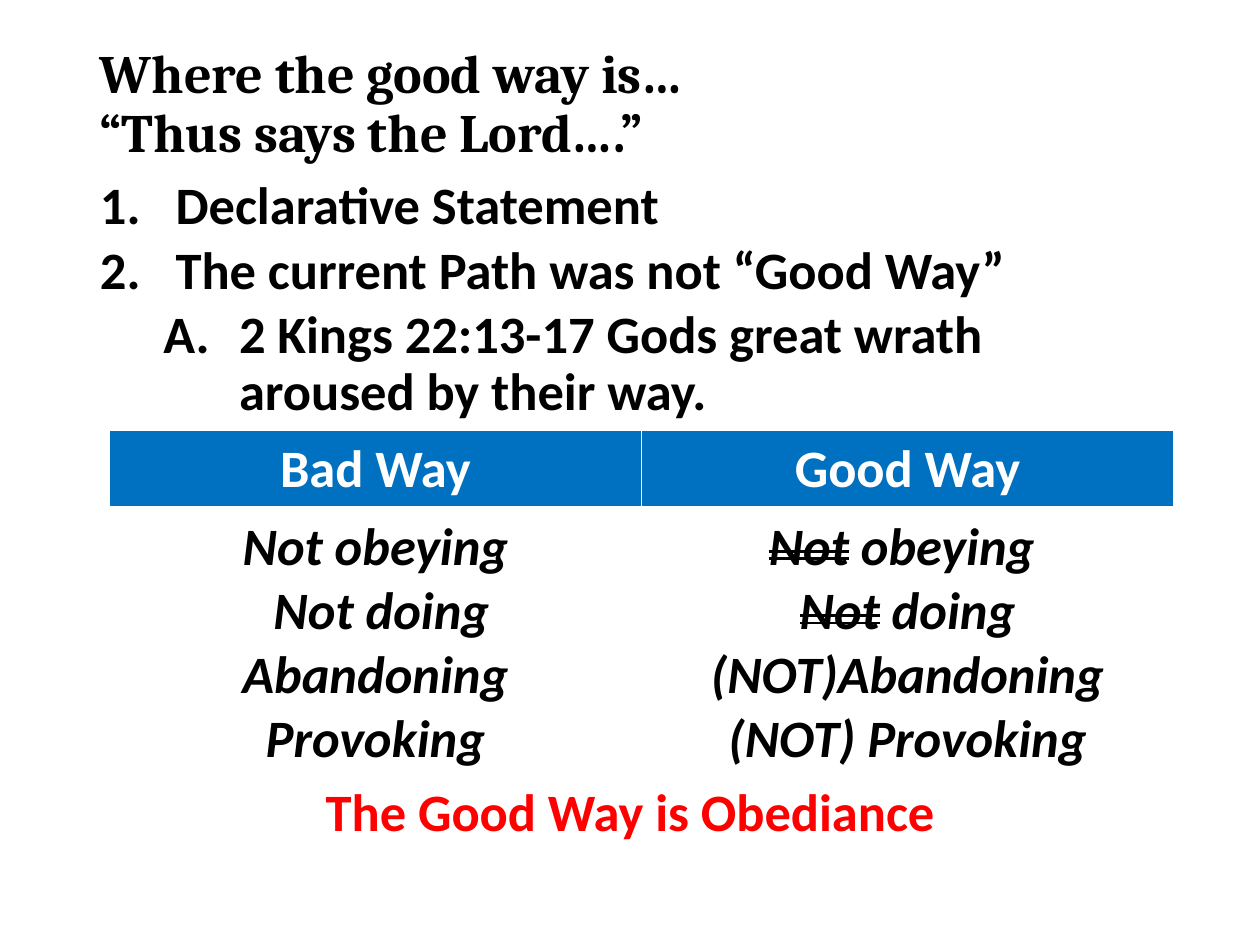
from pptx import Presentation
from pptx.dml.color import RGBColor
from pptx.enum.text import MSO_ANCHOR, MSO_AUTO_SIZE, PP_ALIGN
from pptx.oxml import parse_xml
from pptx.oxml.ns import nsdecls
from pptx.util import Inches, Pt

LEFT, CENTER = PP_ALIGN.LEFT, PP_ALIGN.CENTER
TOP = MSO_ANCHOR.TOP
NO_FIT, GROW = MSO_AUTO_SIZE.NONE, MSO_AUTO_SIZE.SHAPE_TO_FIT_TEXT
BLACK, WHITE, BLUE, RED = "000000", "FFFFFF", "0070C0", "FF0000"

# Content
TITLE = ["Where the good way is…", "“Thus says the Lord….”"]
# (level, numbering, left margin in inches, text)
POINTS = [
    (0, "arabicPeriod", 0.56, "Declarative Statement"),
    (0, "arabicPeriod", 0.56, "The current Path was not “Good Way”"),
    (1, "alphaUcPeriod", 1.03,
     "2 Kings 22:13-17 Gods great wrath aroused by their way."),
]
HEADERS = ["Bad Way", "Good Way"]
# Each line is (struck-out part, remaining part)
WAYS = [
    [("", "Not obeying"), ("", " Not doing"), ("", "Abandoning"), ("", "Provoking")],
    [("Not", " obeying "), ("Not", " doing"), ("", "(NOT)Abandoning"),
     ("", "(NOT) Provoking")],
]
CONCLUSION = "The Good Way is Obediance"

# Geometry in inches
SLIDE_W, SLIDE_H = 9.33, 7
MARGIN, CONTENT_W = 0.64, 8.05
TABLE_LEFT, TABLE_TOP, TABLE_W = 0.81, 3.19, 7.88
ROW_HEIGHTS = [0.56, 1.97]
HANGING = 0.56


def rgb(value):
    return RGBColor.from_string(value)


def add_span(para, text, color, size=28, name="Calibri", italic=False, struck=False):
    span = para.add_run()
    span.text = text
    font = span.font
    font.name, font.size, font.bold, font.italic = name, Pt(size), True, italic
    font.color.rgb = rgb(color)
    if struck:
        span._r.get_or_add_rPr().set("strike", "dblStrike")


def next_para(frame, index):
    return frame.paragraphs[0] if index == 0 else frame.add_paragraph()


def place(shape, left, top, width, height):
    shape.left, shape.top = Inches(left), Inches(top)
    shape.width, shape.height = Inches(width), Inches(height)


def number(para, style, margin):
    props = para._p.get_or_add_pPr()
    props.set("marL", str(Inches(margin)))
    props.set("indent", str(-Inches(HANGING)))
    props.append(parse_xml(f'<a:buFont {nsdecls("a")} typeface="+mj-lt"/>'))
    props.append(parse_xml(f'<a:buAutoNum {nsdecls("a")} type="{style}"/>'))


def style_cell(cell, fill, bottom_width):
    props = cell._tc.get_or_add_tcPr()
    for side, width in (("L", 1), ("R", 1), ("T", 1), ("B", bottom_width)):
        props.append(parse_xml(
            f'<a:ln{side} {nsdecls("a")} w="{Pt(width)}"><a:solidFill>'
            f'<a:srgbClr val="{WHITE}"/></a:solidFill></a:ln{side}>'))
    if fill:
        cell.fill.solid()
        cell.fill.fore_color.rgb = rgb(fill)
    else:
        cell.fill.background()


deck = Presentation()
deck.slide_width, deck.slide_height = Inches(SLIDE_W), Inches(SLIDE_H)
page = deck.slides.add_slide(deck.slide_layouts[1])

# Title
title = page.shapes.title
place(title, MARGIN, 0.35, CONTENT_W, 1.35)
frame = title.text_frame
frame.auto_size, frame.vertical_anchor, frame.margin_top = NO_FIT, TOP, 0
para = frame.paragraphs[0]
para.alignment, para.line_spacing = LEFT, 0.9
for index, line in enumerate(TITLE):
    if index:
        para.add_line_break()
    add_span(para, line, BLACK, 28.8, "Cambria")

# Numbered points
body = page.placeholders[1]
place(body, MARGIN, 1.28, CONTENT_W, 4.44)
frame = body.text_frame
frame.auto_size, frame.vertical_anchor = NO_FIT, TOP
for index, (level, style, margin, text) in enumerate(POINTS):
    para = next_para(frame, index)
    para.level = level
    number(para, style, margin)
    para.line_spacing = 0.9
    para.space_before = Pt(4 if index else 0)
    add_span(para, text, BLACK)

# Comparison table
table = page.shapes.add_table(
    2, len(HEADERS), Inches(TABLE_LEFT), Inches(TABLE_TOP),
    Inches(TABLE_W), Inches(sum(ROW_HEIGHTS))).table
for row, height in zip(table.rows, ROW_HEIGHTS):
    row.height = Inches(height)
for column, (header, lines) in enumerate(zip(HEADERS, WAYS)):
    table.columns[column].width = Inches(TABLE_W / len(HEADERS))
    head, cell = table.cell(0, column), table.cell(1, column)
    style_cell(head, BLUE, 3)
    style_cell(cell, None, 1)
    para = head.text_frame.paragraphs[0]
    para.alignment = CENTER
    add_span(para, header, WHITE)
    for index, (struck, rest) in enumerate(lines):
        para = next_para(cell.text_frame, index)
        para.alignment = CENTER
        if struck:
            add_span(para, struck, BLACK, italic=True, struck=True)
        add_span(para, rest, BLACK, italic=True)

# Conclusion
box = page.shapes.add_textbox(Inches((SLIDE_W - 7) / 2), Inches(5.72), Inches(7), Inches(0.57))
frame = box.text_frame
frame.word_wrap, frame.auto_size = True, GROW
para = frame.paragraphs[0]
para.alignment = CENTER
add_span(para, CONCLUSION, RED)

deck.save("out.pptx")
